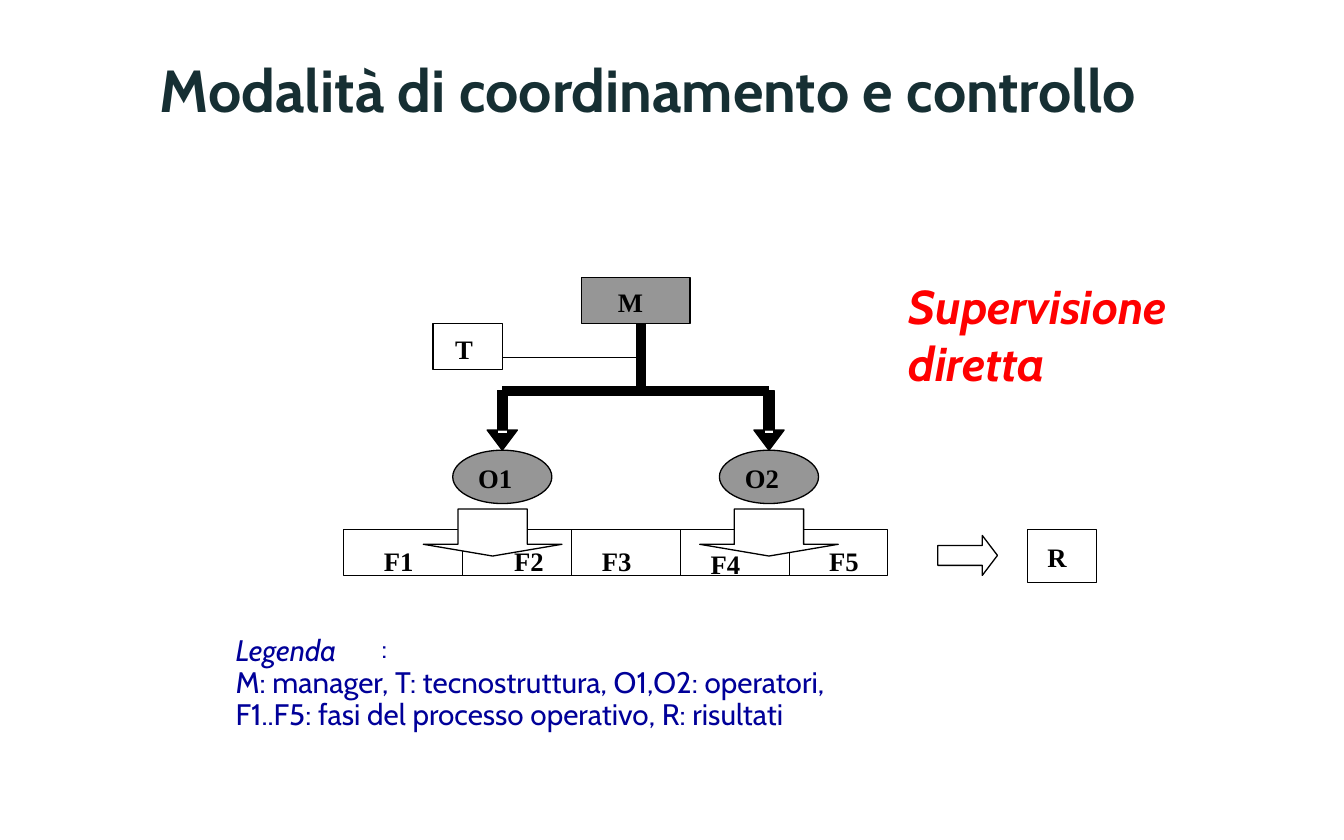
import pptx
import pptx.util
import pptx.dml.color
import pptx.enum.shapes
import pptx.enum.text
import lxml.etree

Cm = pptx.util.Cm
Pt = pptx.util.Pt
RGBColor = pptx.dml.color.RGBColor
KIND = pptx.enum.shapes.MSO_SHAPE
ALIGN = pptx.enum.text.PP_ALIGN
TOP = pptx.enum.text.MSO_ANCHOR.TOP

BLACK = RGBColor(0x00, 0x00, 0x00)
WHITE = RGBColor(0xFF, 0xFF, 0xFF)
GRAY = RGBColor(0x96, 0x96, 0x96)
TEAL = RGBColor(0x16, 0x2F, 0x33)
RED = RGBColor(0xFF, 0x00, 0x00)
NAVY = RGBColor(0x00, 0x00, 0x99)
SANS, SERIF = "Cabin", "Times New Roman"
THIN, THICK = 0.88, 6.75


def write(shape, text, size, color, face=SANS, bold=False, italic=False,
          pad=(0, 0), wrap=False, align=ALIGN.LEFT):
    frame = shape.text_frame
    frame.word_wrap = wrap
    frame.vertical_anchor = TOP
    frame.margin_left, frame.margin_top = Cm(pad[0]), Cm(pad[1])
    frame.margin_right = Cm(pad[0]) if wrap else 0
    frame.margin_bottom = Cm(pad[1]) if wrap else 0
    line = frame.paragraphs[0]
    line.text = text
    line.alignment = align
    font = line.font
    font.name, font.size, font.color.rgb = face, Pt(size), color
    font.bold, font.italic = bold, italic


def place(slide, x, y, w, h, text, size, color, **style):
    box = slide.shapes.add_textbox(Cm(x), Cm(y), Cm(w), Cm(h))
    write(box, text, size, color, **style)


def paint(shape, fill):
    shape.shadow.inherit = False
    shape.fill.solid()
    shape.fill.fore_color.rgb = fill
    shape.line.color.rgb = BLACK
    shape.line.width = Pt(THIN)


def node(slide, kind, x, y, w, h, fill=WHITE, text="", pad=(0, 0)):
    shape = slide.shapes.add_shape(kind, Cm(x), Cm(y), Cm(w), Cm(h))
    paint(shape, fill)
    if text:
        write(shape, text, 18, BLACK, face=SERIF, bold=True, pad=pad)
    return shape


def link(slide, x1, y1, x2, y2, width=THIN):
    line = slide.shapes.add_connector(
        pptx.enum.shapes.MSO_CONNECTOR.STRAIGHT, Cm(x1), Cm(y1), Cm(x2), Cm(y2))
    line.line.color.rgb = BLACK
    line.line.width = Pt(width)
    lxml.etree.SubElement(line._element.spPr, pptx.oxml.ns.qn("a:effectLst"))


def drop(slide, x, y):
    """Black arrow hanging from (x, y): a shaft and a head."""
    def spots(*pairs):
        return [(Cm(x + dx), Cm(y + dy)) for dx, dy in pairs]

    shaft = spots((-0.12, 1.02), (-0.12, 0), (0.12, 0), (0.12, 1.02))
    head = spots((0.36, 0.94), (0, 1.42), (-0.36, 0.94))
    pen = slide.shapes.build_freeform(*shaft[0])
    pen.add_line_segments(shaft[1:], close=True)
    pen.move_to(*head[0])
    pen.add_line_segments(head[1:], close=True)
    paint(pen.convert_to_shape(), BLACK)


def draw_staff(slide, x, y):
    """Manager, staff unit, operators and their links."""
    trunk, bus = x + 7.09, y + 2.7
    ends = x + 3.78, x + 10.13
    for name, mid in zip(("O1", "O2"), ends):
        node(slide, KIND.OVAL, mid - 1.18, y + 4.12, 2.36, 1.27, GRAY,
             name, (0.26, 0.09))
        drop(slide, mid, bus)
    link(slide, ends[0], bus, ends[1], bus, THICK)
    link(slide, trunk, bus, trunk, y + 1.1, THICK)
    node(slide, KIND.RECTANGLE, x + 5.66, y, 2.59, 1.1, GRAY, "M", (0.87, 0.21))
    link(slide, trunk, y + 1.91, ends[0], y + 1.91)
    node(slide, KIND.RECTANGLE, x + 2.13, y + 1.1, 1.65, 1.1, WHITE,
         "T", (0.53, 0.22))


def draw_flow(slide, x, y):
    """Phases F1 to F5, the operators' arrows and the result."""
    tall = 1.1
    node(slide, KIND.RECTANGLE, x, y, 12.95, tall)
    for i in range(4):
        edge = x + 2.84 + 2.59 * i
        link(slide, edge, y, edge, y + tall)
    for left in (1.9, 8.48):
        node(slide, KIND.DOWN_ARROW, x + left, y - 0.48, 3.3, 1.12).adjustments[1] = 0.25
    for i, left in enumerate((0.96, 4.06, 6.15, 8.74, 11.56), 1):
        sink = 0.06 if i == 4 else 0
        place(slide, x + left, y + 0.38 + sink, 1.55, 0.89, f"F{i}", 18, BLACK,
              face=SERIF, bold=True)

    # Result
    arrow = node(slide, KIND.RIGHT_ARROW, x + 14.15, y + 0.15, 1.42, 0.95)
    arrow.adjustments[1] = 0.38
    node(slide, KIND.RECTANGLE, x + 16.28, y, 1.65, 1.27, WHITE, "R", (0.48, 0.28))


def draw_key(slide, x, y):
    place(slide, x, y, 2.64, 0.84, "Legenda", 20, NAVY, italic=True)
    place(slide, x + 3.48, y, 0.81, 0.94, ":", 18, NAVY)
    rows = ("M: manager, T: tecnostruttura, O1,O2: operatori,",
            "F1..F5: fasi del processo operativo, R: risultati")
    for i, row in enumerate(rows, 1):
        place(slide, x, y + 0.76 * i, 15.37, 0.84, row, 20, NAVY)


def draw_heads(slide, x, y):
    """Slide title and the name of the mode."""
    pad = (0.3, 0.15)
    place(slide, x, y, 29.08, 1.98, "Modalità di coordinamento e controllo", 40,
          TEAL, bold=True, pad=pad, wrap=True, align=ALIGN.CENTER)
    place(slide, x + 20.45, y + 5.33, 8.81, 3, "Supervisione diretta", 32, RED,
          bold=True, italic=True, pad=pad, wrap=True)


def main():
    deck = pptx.Presentation()
    deck.slide_width, deck.slide_height = Cm(32), Cm(20)
    slide = deck.slides.add_slide(deck.slide_layouts[6])
    draw_key(slide, 5.61, 15.04)
    draw_staff(slide, 8.18, 6.6)
    draw_flow(slide, 8.18, 12.6)
    draw_heads(slide, 0.89, 1.12)
    deck.save("out.pptx")


if __name__ == "__main__":
    main()
